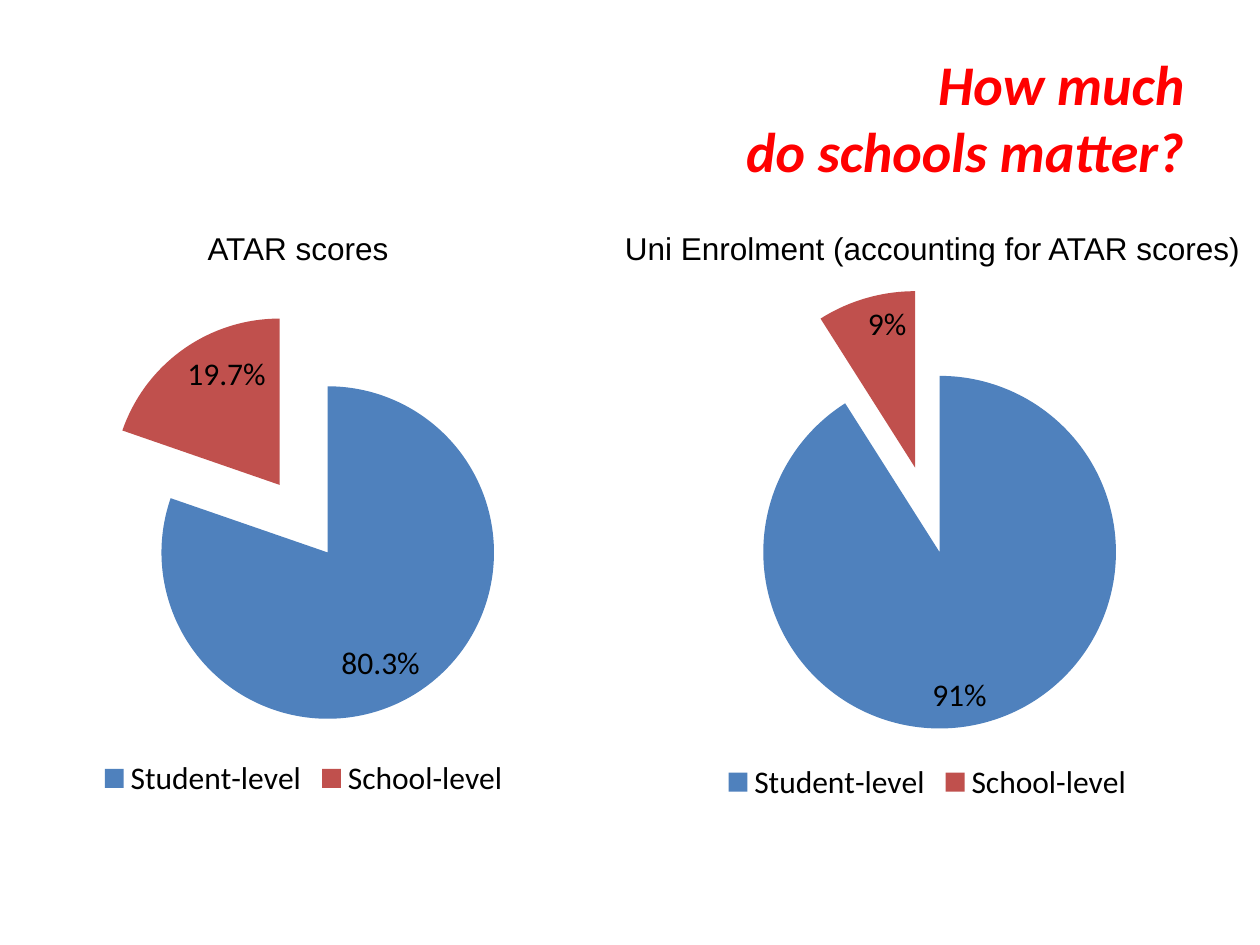
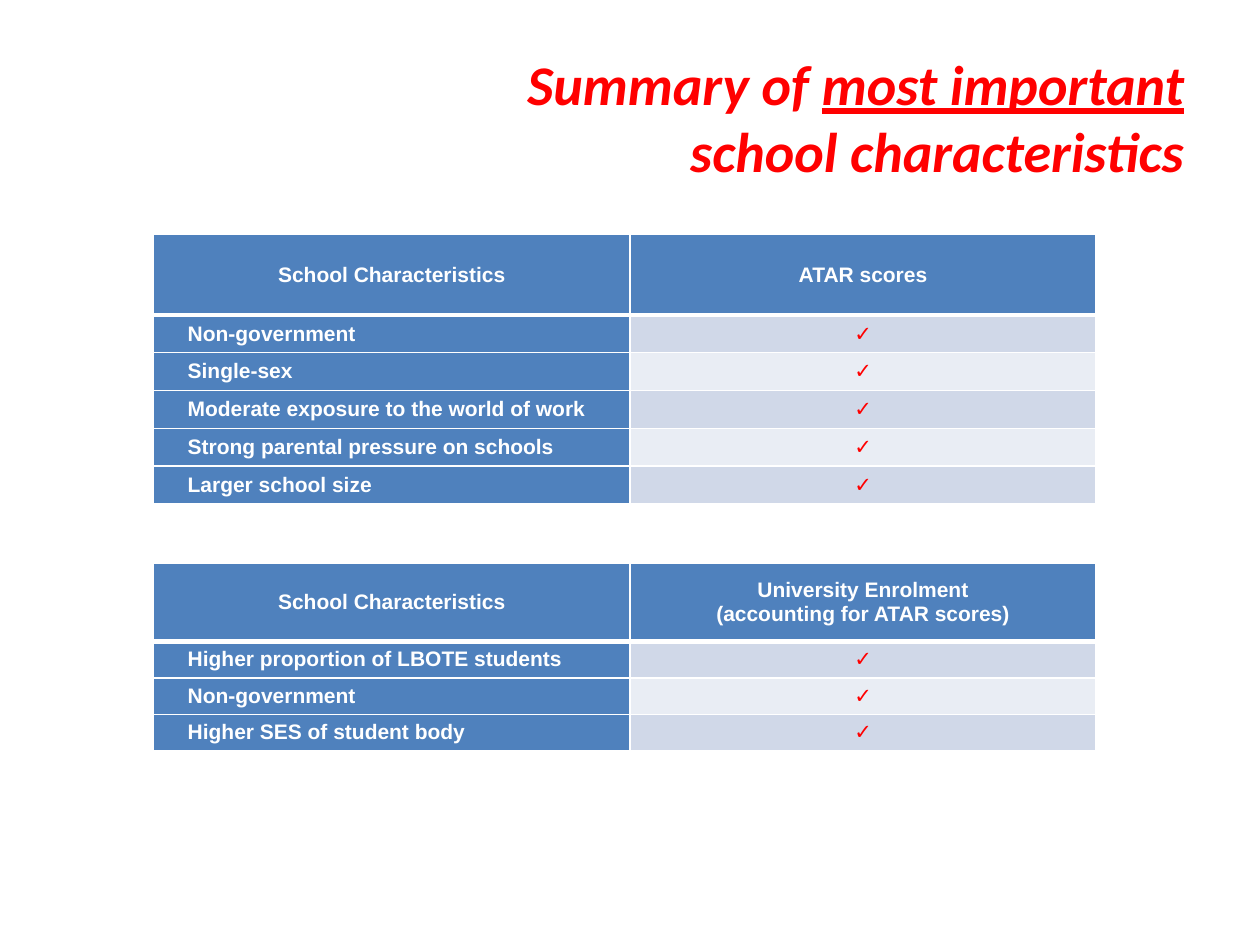
import pptx
import pptx.chart.data
import pptx.dml.color
import pptx.enum.chart
import pptx.enum.text
import pptx.oxml
import pptx.oxml.ns
import pptx.util
from dataclasses import dataclass
from lxml import etree
from pptx.util import Inches

RED = pptx.dml.color.RGBColor(0xFF, 0x00, 0x00)
BLACK = pptx.dml.color.RGBColor(0x00, 0x00, 0x00)
WHITE = pptx.dml.color.RGBColor(0xFF, 0xFF, 0xFF)
BLUE = pptx.dml.color.RGBColor(0x4F, 0x81, 0xBD)
BRICK = pptx.dml.color.RGBColor(0xC0, 0x50, 0x4D)
BANDS = (pptx.dml.color.RGBColor(0xD0, 0xD8, 0xE8),
         pptx.dml.color.RGBColor(0xE9, 0xED, 0xF4))

HEADING_FONT = "Calibri"
BODY_FONT = "Arial"
LEVELS = {"Student-level": BLUE, "School-level": BRICK}
EXPLOSION = 25
TICK = "✓"

ALIGN = pptx.enum.text.PP_ALIGN
MIDDLE = pptx.enum.text.MSO_ANCHOR.MIDDLE


@dataclass(frozen=True)
class Box:
    left: float
    top: float
    width: float
    height: float

    def lengths(self) -> tuple:
        return tuple(Inches(v) for v in (self.left, self.top, self.width, self.height))


@dataclass(frozen=True)
class Run:
    text: str
    underline: bool = False


@dataclass(frozen=True)
class LevelShare:
    caption: str
    caption_box: Box
    pie_box: Box
    shares: tuple[float, float]
    label_format: str


@dataclass(frozen=True)
class CharacteristicsTable:
    top: float
    outcome: tuple[str, ...]
    characteristics: tuple[str, ...]
    header_height: float
    row_height: float


TITLE_BOX = Box(4.06, 0.3, 5.44, 1.25)
TABLE_LEFT = 1.22
COLUMN_WIDTHS = (3.78, 3.7)

LEVEL_SHARES = (
    LevelShare("ATAR scores", Box(1.46, 1.77, 1.81, 0.4),
               Box(0.2, 2.33, 4.42, 4.05), (80.3, 19.7), '0.0"%"'),
    LevelShare("Uni Enrolment (accounting for ATAR scores)", Box(4.76, 1.77, 5.28, 0.4),
               Box(5, 2.16, 4.72, 4.25), (91, 9), '0"%"'),
)

TABLES = (
    CharacteristicsTable(
        1.86, ("ATAR scores",),
        ("Non-government", "Single-sex", "Moderate exposure to the world of work",
         "Strong parental pressure on schools", "Larger school size"),
        0.64, 0.3),
    CharacteristicsTable(
        4.47, ("University Enrolment", "(accounting for ATAR scores)"),
        ("Higher proportion of LBOTE students", "Non-government",
         "Higher SES of student body"),
        0.62, 0.29),
)


def set_font(font, name: str, size: float, color, bold: bool = False,
             italic: bool = False) -> None:
    font.name = name
    font.size = pptx.util.Pt(size)
    font.color.rgb = color
    font.bold = bold
    font.italic = italic


def add_text_frame(slide, box: Box):
    frame = slide.shapes.add_textbox(*box.lengths()).text_frame
    frame.word_wrap = True
    return frame


def add_title(slide, lines: tuple[tuple[Run, ...], ...]) -> None:
    frame = add_text_frame(slide, TITLE_BOX)
    frame.vertical_anchor = MIDDLE
    paragraph = frame.paragraphs[0]
    paragraph.alignment = ALIGN.RIGHT
    for number, line in enumerate(lines):
        if number:
            paragraph.add_line_break()
        for part in line:
            run = paragraph.add_run()
            run.text = part.text
            set_font(run.font, HEADING_FONT, 32, RED, bold=True, italic=True)
            run.font.underline = part.underline


def add_caption(slide, text: str, box: Box) -> None:
    paragraph = add_text_frame(slide, box).paragraphs[0]
    paragraph.alignment = ALIGN.CENTER
    run = paragraph.add_run()
    run.text = text
    set_font(run.font, BODY_FONT, 18, BLACK)


def add_pie(slide, share: LevelShare) -> None:
    data = pptx.chart.data.CategoryChartData()
    data.categories = list(LEVELS)
    data.add_series("Series 1", share.shares)
    chart = slide.shapes.add_chart(
        pptx.enum.chart.XL_CHART_TYPE.PIE, *share.pie_box.lengths(), data).chart
    set_font(chart.font, HEADING_FONT, 18, BLACK)
    chart.has_title = False
    chart.has_legend = True
    chart.legend.position = pptx.enum.chart.XL_LEGEND_POSITION.BOTTOM
    chart.legend.include_in_layout = False

    plot = chart.plots[0]
    plot.vary_by_categories = True
    series = plot.series[0]
    for index, color in enumerate(LEVELS.values()):
        fill = series.points[index].format.fill
        fill.solid()
        fill.fore_color.rgb = color

    # Pull the slices apart; the element belongs just before the points
    explosion = etree.Element(pptx.oxml.ns.qn("c:explosion"), val=str(EXPLOSION))
    series._element.find(pptx.oxml.ns.qn("c:dPt")).addprevious(explosion)

    plot.has_data_labels = True
    labels = plot.data_labels
    labels.show_value = True
    labels.show_percentage = False
    labels.number_format = share.label_format
    labels.number_format_is_linked = False
    labels.position = pptx.enum.chart.XL_LABEL_POSITION.INSIDE_END


def set_borders(cell, top: float = 1, bottom: float = 1) -> None:
    properties = cell._tc.get_or_add_tcPr()
    for side, points in (("L", 1), ("R", 1), ("T", top), ("B", bottom)):
        line = etree.SubElement(properties, pptx.oxml.ns.qn(f"a:ln{side}"),
                                w=str(pptx.util.Pt(points)))
        fill = etree.SubElement(line, pptx.oxml.ns.qn("a:solidFill"))
        etree.SubElement(fill, pptx.oxml.ns.qn("a:srgbClr"), val=str(WHITE))


def fill_cell(cell, lines: tuple[str, ...], fill, color=WHITE, bold: bool = True,
              align=ALIGN.CENTER, indent: float = 0) -> None:
    cell.fill.solid()
    cell.fill.fore_color.rgb = fill
    cell.vertical_anchor = MIDDLE
    cell.margin_left = cell.margin_right = Inches(0.07)
    cell.margin_top = cell.margin_bottom = 0
    paragraph = cell.text_frame.paragraphs[0]
    paragraph.alignment = align
    if indent:
        paragraph._p.get_or_add_pPr().set("marL", str(Inches(indent)))
    for number, line in enumerate(lines):
        if number:
            paragraph.add_line_break()
        run = paragraph.add_run()
        run.text = line
        set_font(run.font, BODY_FONT, 12, color, bold=bold)


def add_characteristics(slide, content: CharacteristicsTable) -> None:
    heights = [content.header_height] + [content.row_height] * len(content.characteristics)
    box = Box(TABLE_LEFT, content.top, sum(COLUMN_WIDTHS), sum(heights))
    table = slide.shapes.add_table(
        len(heights), len(COLUMN_WIDTHS), *box.lengths()).table
    for column, width in zip(table.columns, COLUMN_WIDTHS):
        column.width = Inches(width)
    for index, height in enumerate(heights):
        table.rows[index].height = Inches(height)
        for cell in table.rows[index].cells:
            set_borders(cell, top=3 if index == 1 else 1, bottom=3 if index == 0 else 1)

    fill_cell(table.cell(0, 0), ("School Characteristics",), BLUE)
    fill_cell(table.cell(0, 1), content.outcome, BLUE)
    for index, characteristic in enumerate(content.characteristics):
        fill_cell(table.cell(index + 1, 0), (characteristic,), BLUE,
                  align=ALIGN.LEFT, indent=0.2)
        fill_cell(table.cell(index + 1, 1), (TICK,), BANDS[index % 2], color=RED)


def main() -> None:
    deck = pptx.Presentation()
    deck.slide_width = Inches(10)
    deck.slide_height = Inches(7.5)
    blank = deck.slide_layouts[6]

    # Share of variation at each level
    schools_matter = deck.slides.add_slide(blank)
    add_title(schools_matter, ((Run("How much"),), (Run("do schools matter?"),)))
    for share in LEVEL_SHARES:
        add_pie(schools_matter, share)
        add_caption(schools_matter, share.caption, share.caption_box)

    # Characteristics that count for each outcome
    summary = deck.slides.add_slide(blank)
    add_title(summary, ((Run("Summary of "), Run("most important", underline=True),
                         Run(" school characteristics")),))
    for content in TABLES:
        add_characteristics(summary, content)

    deck.save("out.pptx")


if __name__ == "__main__":
    main()
